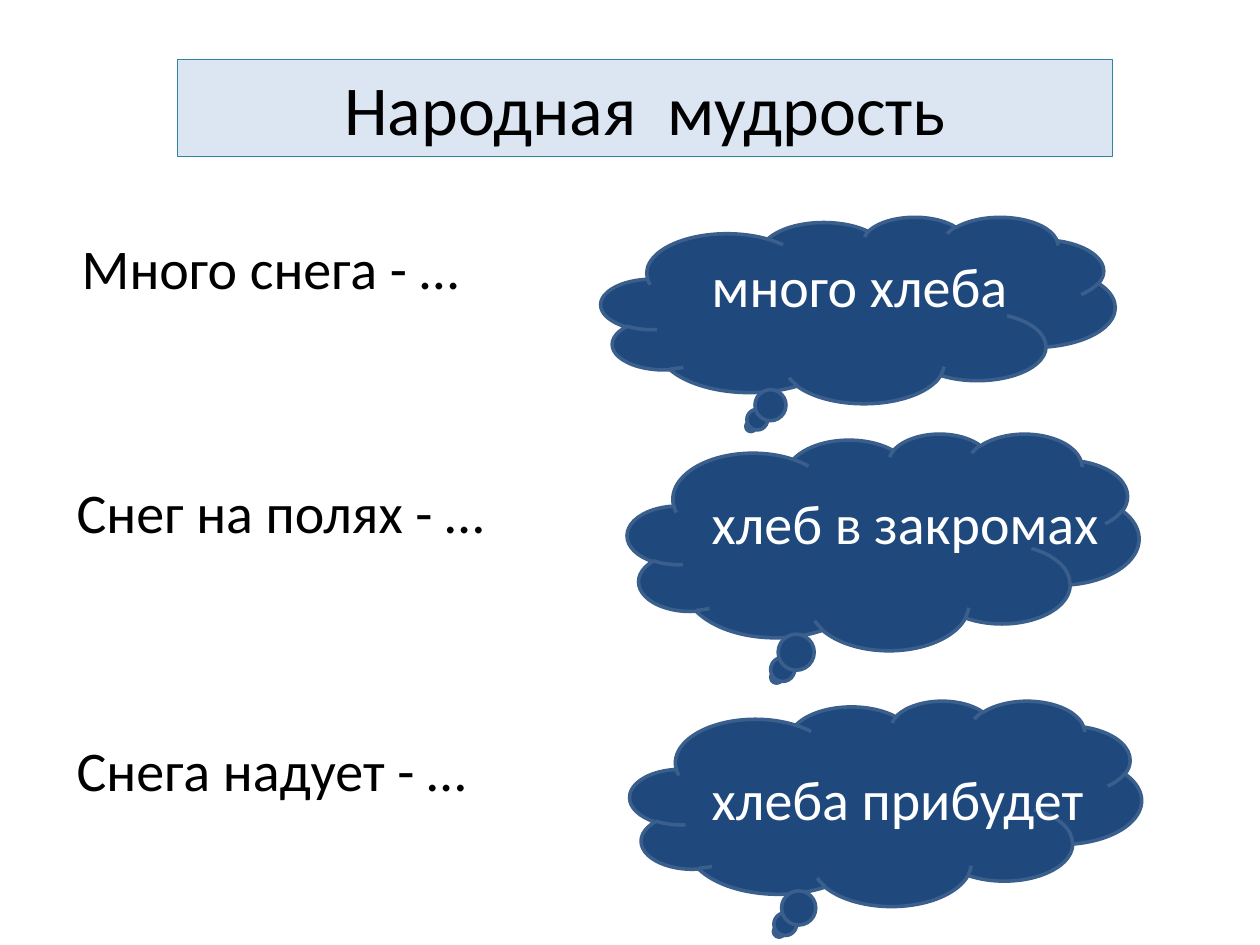
from pptx import Presentation
from pptx.dml.color import RGBColor
from pptx.enum.shapes import MSO_SHAPE
from pptx.enum.text import MSO_ANCHOR, PP_ALIGN
from pptx.util import Inches, Pt

CLOUD, RECT = MSO_SHAPE.CLOUD_CALLOUT, MSO_SHAPE.RECTANGLE
TOP, LEFT, CENTER = MSO_ANCHOR.TOP, PP_ALIGN.LEFT, PP_ALIGN.CENTER
COLORS = {
    "navy": "1F497D", "outline": "3A5F8C", "pale": "DCE6F2",
    "teal": "31859C", "black": "000000", "white": "FFFFFF",
}

prs = Presentation()
prs.slide_width, prs.slide_height = Inches(10), Inches(7.5)
s = prs.slides.add_slide(prs.slide_layouts[6])


def add_box(kind, box, fill=None, line=None, width=0.75):
    scale = [prs.slide_width / 100, prs.slide_height / 100] * 2
    sp = s.shapes.add_shape(kind, *[round(v * k) for v, k in zip(box, scale)])
    sp.shadow.inherit = False
    for part, color in ((sp.fill, fill), (sp.line.fill, line)):
        if color:
            part.solid()
            part.fore_color.rgb = RGBColor.from_string(COLORS[color])
        else:
            part.background()
    if line:
        sp.line.width = Pt(width)
    return sp


def write(sp, text, color, size=32, align=LEFT):
    tf = sp.text_frame
    tf.word_wrap, tf.vertical_anchor = True, TOP
    p = tf.paragraphs[0]
    p.alignment = align
    r = p.add_run()
    r.text = text
    for name, value in {"name": "Calibri", "size": Pt(size)}.items():
        setattr(r.font, name, value)
    r.font.color.rgb = RGBColor.from_string(COLORS[color])


clouds = [
    (50, 74.13, 40.6, 21.73),
    (49.8, 45.87, 40.6, 22.93),
    (47.7, 22.93, 40.8, 19.73),
]
for box in clouds:
    add_box(CLOUD, box, "navy", "outline", 2)

title = add_box(RECT, (14.1, 6.27, 74.2, 10.27), "pale", "teal")
write(title, "Народная  мудрость", "black", 40, CENTER)

LINE_HEIGHT = 8.53
sayings = [
    ("Много снега - …", 5.5, 24, 38.3, "white", "много хлеба", 26, 35.2),
    ("Снег на полях - …", 5.1, 49.87, 44.9, None, "хлеб в закромах", 51.07, 37.4),
    ("Снега надует - …", 5.1, 77.2, 44.1, None, "хлеба прибудет", 80.27, 35.1),
]
for start, x, y, w, line, ending, end_y, end_w in sayings:
    write(add_box(RECT, (x, y, w, LINE_HEIGHT), line=line), start, "black")
    write(add_box(RECT, (55.5, end_y, end_w, LINE_HEIGHT)), ending, "white")

prs.save("out.pptx")
